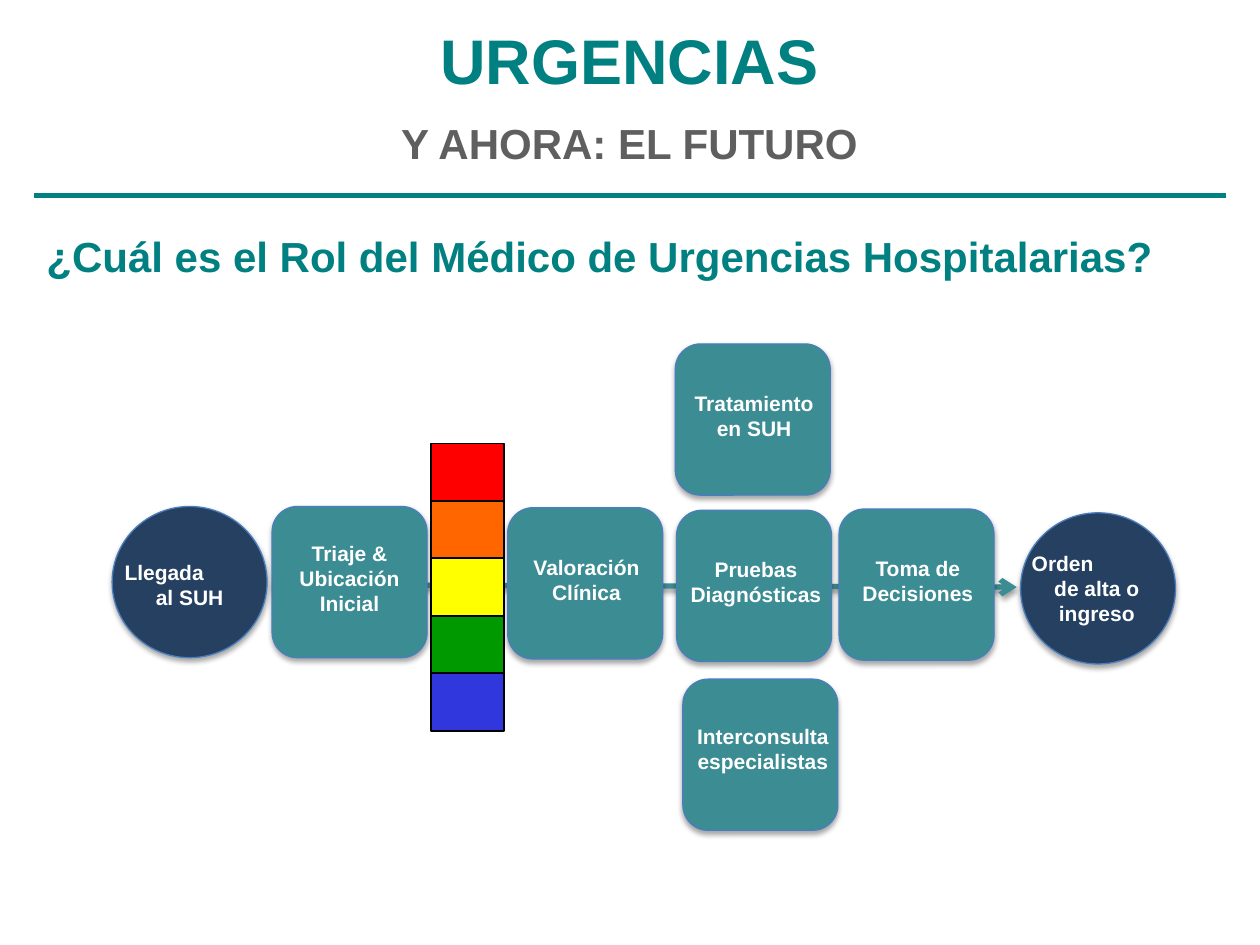
from lxml import etree
from pptx import Presentation
from pptx import util as u
from pptx.dml.color import RGBColor
from pptx.enum import shapes, text
from pptx.oxml.ns import qn

COLOURS = {
    "teal": "008080", "grey": "5F5F5F", "step": "3C8C93", "end": "254061",
    "outline": "4B7EBC", "white": "FFFFFF", "black": "000000",
}
TRIAGE_LEVELS = ["FF0000", "FF6600", "FFFF00", "009900", "2F37DD"]
SIDE, HEIGHT = 1.23, 1.2
LEFT, CENTER = text.PP_ALIGN.LEFT, text.PP_ALIGN.CENTER
ROUNDED, OVAL = shapes.MSO_SHAPE.ROUNDED_RECTANGLE, shapes.MSO_SHAPE.OVAL


class Board:
    """Draws the elements of the emergency flow in one consistent style."""

    def __init__(self, slide, font="Arial"):
        self.slide = slide
        self.font = font

    def rgb(self, colour):
        return RGBColor.from_string(COLOURS.get(colour, colour))

    def box(self, x, y, w, h):
        return [u.Inches(value) for value in (x, y, w, h)]

    def effects(self, item, opacity=0, distance=1.8):
        effects = etree.SubElement(item._element.spPr, qn("a:effectLst"))
        if opacity:
            shadow = etree.SubElement(
                effects, qn("a:outerShdw"), blurRad=str(u.Pt(3.1)),
                dist=str(u.Pt(distance)), dir="5400000", rotWithShape="0")
            black = etree.SubElement(shadow, qn("a:srgbClr"), val=COLOURS["black"])
            etree.SubElement(black, qn("a:alpha"), val=str(opacity * 1000))

    def shape(self, kind, x, y, w, h, fill, outline, width, opacity=0):
        item = self.slide.shapes.add_shape(kind, *self.box(x, y, w, h))
        item.fill.solid()
        item.fill.fore_color.rgb = self.rgb(fill)
        item.line.color.rgb = self.rgb(outline)
        item.line.width = u.Pt(width)
        self.effects(item, opacity)

    def line(self, x1, y1, x2, y2, colour, arrow=False):
        item = self.slide.shapes.add_connector(
            shapes.MSO_CONNECTOR.STRAIGHT, *self.box(x1, y1, x2, y2))
        item.line.color.rgb = self.rgb(colour)
        item.line.width = u.Pt(3)
        if arrow:
            etree.SubElement(item.line._get_or_add_ln(), qn("a:tailEnd"), type="arrow")
        self.effects(item, 38 if arrow else 0, 1.6)

    def words(self, x, y, w, h, paragraphs):
        frame = self.slide.shapes.add_textbox(*self.box(x, y, w, h)).text_frame
        frame.word_wrap = True
        for index, (content, size, colour, align, before) in enumerate(paragraphs):
            paragraph = frame.add_paragraph() if index else frame.paragraphs[0]
            paragraph.text = content
            paragraph.alignment = align
            paragraph.space_before = u.Pt(before)
            paragraph.font.name = self.font
            paragraph.font.size = u.Pt(size)
            paragraph.font.bold = True
            paragraph.font.color.rgb = self.rgb(colour)

    def stage(self, kind, x, y, fill, label, label_box):
        self.shape(kind, x, y, SIDE, HEIGHT, fill, "outline", 0.75, 35)
        self.words(*label_box, [(content, 12, "white", align, 0) for content, align in label])

    def scale(self, x, y, w, h, levels):
        for index, level in enumerate(levels):
            self.shape(shapes.MSO_SHAPE.RECTANGLE, x, y + index * h, w, h, level, "black", 1)


def main():
    deck = Presentation()
    deck.slide_width, deck.slide_height = u.Inches(10), u.Inches(7.5)
    board = Board(deck.slides.add_slide(deck.slide_layouts[6]))

    board.words(0.27, 1.78, 9.45, 0.5, [
        ("¿Cuál es el Rol del Médico de Urgencias Hospitalarias?", 24, "teal", LEFT, 2)])
    board.line(0.27, 1.55, 9.73, 1.55, "teal")
    board.words(0.27, 0.12, 9.45, 1.31, [
        ("URGENCIAS", 36, "teal", CENTER, 4),
        ("Y AHORA: EL FUTURO", 24, "grey", CENTER, 12)])

    board.line(2.16, 4.64, 8.07, 4.66, "step", arrow=True)
    steps = [
        ("Triaje & Ubicación Inicial", 2.16, 4.02, (2.16, 4.24, SIDE, 0.71)),
        ("Valoración Clínica", 4.03, 4.03, (4.04, 4.35, SIDE, 0.5)),
        ("Tratamiento en SUH", 5.36, 2.73, (5.37, 3.05, SIDE, 0.5)),
        ("Toma de Decisiones", 6.66, 4.04, (6.67, 4.36, SIDE, 0.5)),
        ("Pruebas Diagnósticas", 5.37, 4.05, (5.36, 4.37, 1.28, 0.5)),
        ("Interconsulta especialistas", 5.42, 5.39, (5.38, 5.69, 1.35, 0.5)),
    ]
    for label, x, y, label_box in steps:
        board.stage(ROUNDED, x, y, "step", [(label, CENTER)], label_box)
    ends = [
        ("Llegada", "al SUH", 0.89, 4.02, (0.89, 4.39, SIDE, 0.5)),
        ("Orden", "de alta o ingreso", 8.1, 4.07, (8.09, 4.32, SIDE, 0.71)),
    ]
    for first, rest, x, y, label_box in ends:
        board.stage(OVAL, x, y, "end", [(first, LEFT), (rest, CENTER)], label_box)
    board.scale(3.42, 3.52, 0.58, 2.28 / len(TRIAGE_LEVELS), TRIAGE_LEVELS)

    deck.save("out.pptx")


if __name__ == "__main__":
    main()
